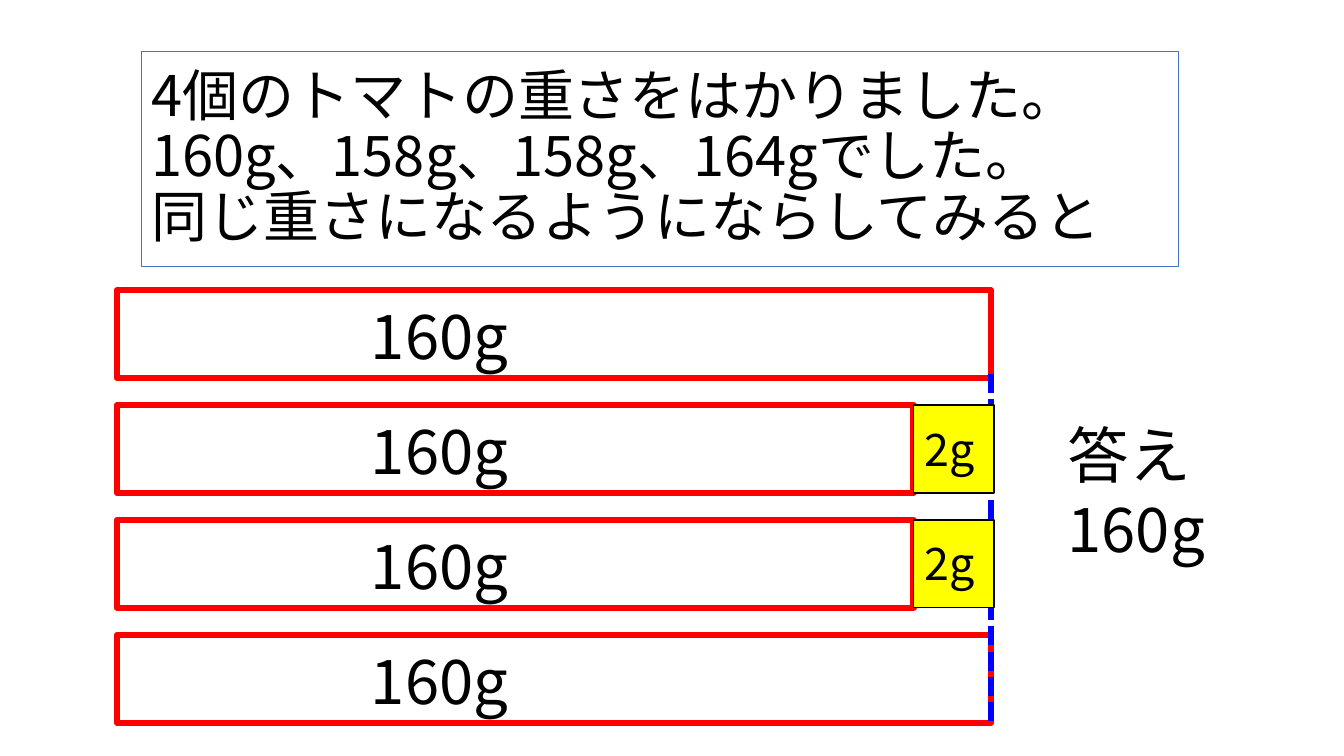
from pptx import Presentation
from pptx.dml.color import RGBColor as RGB
from pptx.enum.dml import MSO_LINE
from pptx.enum.shapes import MSO_CONNECTOR, MSO_SHAPE
from pptx.enum.text import MSO_ANCHOR, MSO_AUTO_SIZE, PP_ALIGN
from pptx.oxml.ns import qn
from pptx.util import Inches, Pt
from lxml.etree import SubElement

COLORS = {"text": "000000", "bar": "FF0000", "level": "0000FF",
          "extra": "FFFF00", "frame": "4472C4"}
FONT = "Noto Sans CJK JP"

BAR_LEFT, BAR_TOP, BAR_STEP, BAR_HEIGHT = 1.16, 2.88, 1.14, 0.87
FULL_WIDTH, SHORT_WIDTH = 8.67, 7.9
BAR_WIDTHS = [FULL_WIDTH, SHORT_WIDTH, SHORT_WIDTH, FULL_WIDTH]


class Board:
    def __init__(self, prs):
        self.slide = prs.slides.add_slide(prs.slide_layouts[5])
        self.shapes = self.slide.shapes

    def outline(self, sp, color, width):
        sp.line.color.rgb = RGB.from_string(COLORS[color])
        sp.line.width = Pt(width)

    def set_text(self, tf, lines, size, **fmt):
        """Fill a text frame, one paragraph per line; fmt holds frame settings."""
        for name, value in fmt.items():
            setattr(tf, name, value)
        tf.text = "\n".join(lines)
        for p in tf.paragraphs:
            p.alignment = PP_ALIGN.LEFT
            for r in p.runs:
                r.font.size, r.font.name = Pt(size), FONT
                r.font.color.rgb = RGB.from_string(COLORS["text"])
                SubElement(r.font._element, qn("a:ea")).set("typeface", FONT)

    def title(self, lines, box, size):
        sp = self.shapes.title
        sp.left, sp.top, sp.width, sp.height = map(Inches, box)
        self.outline(sp, "frame", 0.75)
        self.set_text(sp.text_frame, ["\v".join(lines)], size, word_wrap=True,
                      auto_size=MSO_AUTO_SIZE.NONE,
                      vertical_anchor=MSO_ANCHOR.MIDDLE)
        sp.text_frame.paragraphs[0].line_spacing = 0.9

    def rect(self, box, line, width, fill=None, shapes=None):
        sp = (shapes or self.shapes).add_shape(MSO_SHAPE.RECTANGLE, *map(Inches, box))
        sp.shadow.inherit = False
        if fill:
            sp.fill.solid()
            sp.fill.fore_color.rgb = RGB.from_string(COLORS[fill])
        else:
            sp.fill.background()
        self.outline(sp, line, width)

    def text(self, lines, box, size, wrap=False, shapes=None):
        sp = (shapes or self.shapes).add_textbox(*map(Inches, box))
        self.set_text(sp.text_frame, lines, size, word_wrap=wrap,
                      auto_size=MSO_AUTO_SIZE.SHAPE_TO_FIT_TEXT)

    def dashed_line(self, start, end, color, width):
        line = self.shapes.add_connector(MSO_CONNECTOR.STRAIGHT,
                                         *map(Inches, start + end))
        self.outline(line, color, width)
        line.line.dash_style = MSO_LINE.SQUARE_DOT
        SubElement(line._element.spPr, qn("a:effectLst"))

    def extra(self, label, left, top):
        """Add a grouped yellow block with its label."""
        shapes = self.shapes.add_group_shape().shapes
        self.rect((left, top, 0.8, BAR_HEIGHT), "text", 1, "extra", shapes)
        self.text([label], (left + 0.01, top + 0.11, 0.81, 0.64), 32, shapes=shapes)


def main():
    prs = Presentation()
    prs.slide_width, prs.slide_height = Inches(13.33), Inches(7.5)
    board = Board(prs)
    board.title(["4個のトマトの重さをはかりました。",
                 "160g、158g、158g、164gでした。",
                 "同じ重さになるようにならしてみると"], (1.4, 0.51, 10.29, 2.13), 40)
    board.text(["答え", "160g"], (10.49, 4.09, 1.97, 1.58), 44, wrap=True)

    tops = [BAR_TOP + i * BAR_STEP for i in range(len(BAR_WIDTHS))]
    for top, width in zip(tops, BAR_WIDTHS):
        board.rect((BAR_LEFT, top, width, BAR_HEIGHT), "bar", 4.5)
        board.text(["160g"], (3.58, top + 0.03, 1.91, 0.84), 44)

    right = BAR_LEFT + FULL_WIDTH
    board.dashed_line((right, 3.71), (right, tops[-1] + BAR_HEIGHT), "level", 4.5)
    for top, width in zip(tops, BAR_WIDTHS):
        if width == SHORT_WIDTH:
            board.extra("2g", BAR_LEFT + width, top)
    prs.save("out.pptx")


if __name__ == "__main__":
    main()
